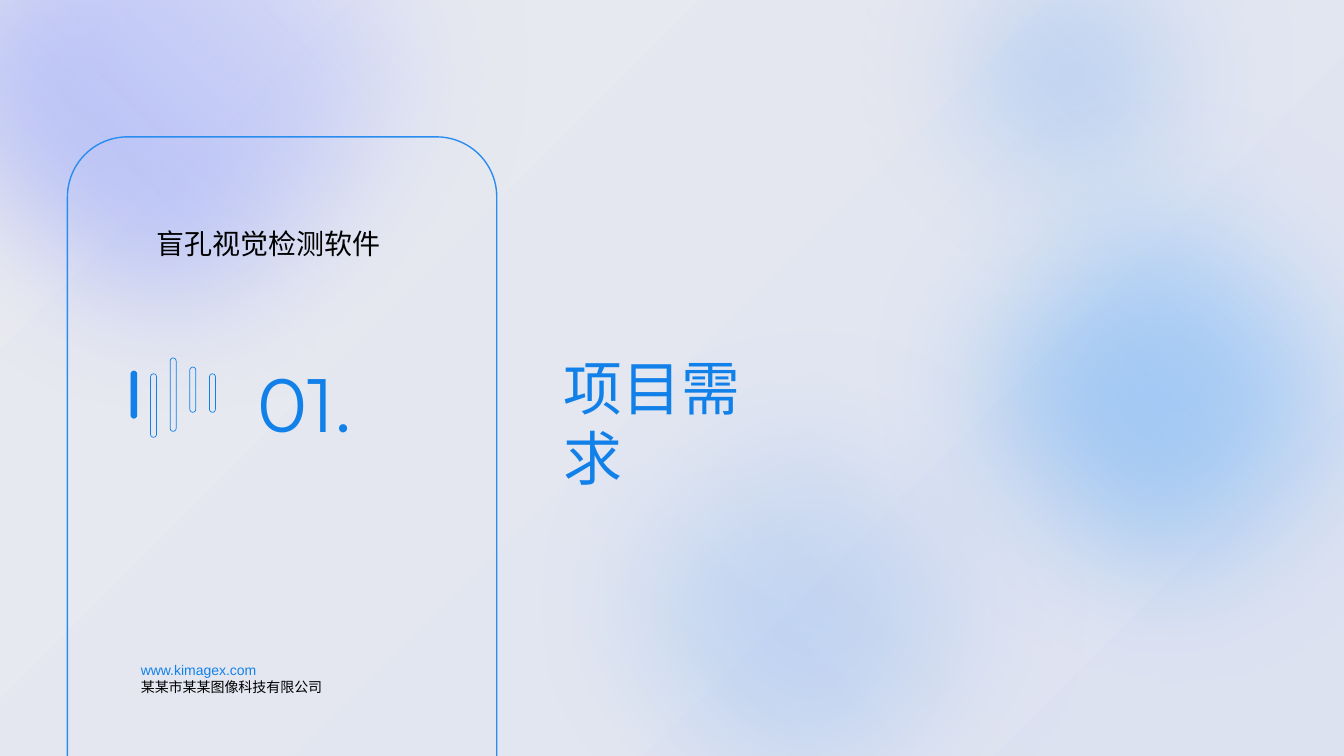
from lxml import etree
from pptx import Presentation
from pptx.dml.color import RGBColor
from pptx.enum.shapes import MSO_SHAPE
from pptx.enum.text import MSO_AUTO_SIZE
from pptx.oxml.ns import qn
from pptx.util import Cm, Pt

RECTANGLE = MSO_SHAPE.RECTANGLE
ELLIPSE = MSO_SHAPE.OVAL
ROUNDED = MSO_SHAPE.ROUNDED_RECTANGLE
FIT_TEXT = MSO_AUTO_SIZE.SHAPE_TO_FIT_TEXT

THEME = {
    "blue": "1181E9",
    "frame": "298DEF",
    "black": "000000",
    "backdrop": [("EAEBF0", 100), ("DDE2F1", 100)],
    "pale_glow": [("1181E9", 30), ("D5D5FB", 25)],
    "top_glow": [("1181E9", 30), ("D5D5FB", 43)],
    "blue_glow": [("298DEF", 30), ("E0EBFD", 100)],
    "violet_glow": [("8393F7", 100), ("E6E9FD", 37)],
    "cjk": "Noto Sans CJK SC",
    "latin": "Arial",
    "number_font": "Montserrat",
    "footer_size": 10,
    "heading_size": 20,
    "title_size": 42,
    "number_size": 54,
}

deck = Presentation()
deck.slide_width = Cm(33.87)
deck.slide_height = Cm(19.05)
page = deck.slides.add_slide(deck.slide_layouts[6])


def add_gradient_shape(kind, left, top, width, height, stops, angle):
    shape = page.shapes.add_shape(kind, Cm(left), Cm(top), Cm(width), Cm(height))
    shape.shadow.inherit = False
    shape.line.fill.background()
    shape.fill.gradient()
    gradient = shape._element.spPr.find(qn("a:gradFill"))
    for child in list(gradient):
        gradient.remove(child)
    stop_list = etree.SubElement(gradient, qn("a:gsLst"))
    for position, (color, opacity) in zip((0, 100000), stops):
        stop = etree.SubElement(stop_list, qn("a:gs"), pos=str(position))
        tone = etree.SubElement(stop, qn("a:srgbClr"), val=color)
        etree.SubElement(tone, qn("a:alpha"), val=str(opacity * 1000))
    etree.SubElement(gradient, qn("a:lin"), ang=str(angle * 60000), scaled="0")
    return shape


def add_text(left, top, width, height, lines, font, size, wrap=False, margins=(0, 0)):
    box = page.shapes.add_textbox(Cm(left), Cm(top), Cm(width), Cm(height))
    frame = box.text_frame
    frame.word_wrap = wrap
    frame.auto_size = FIT_TEXT
    frame.margin_left = frame.margin_right = Cm(margins[0])
    frame.margin_top = frame.margin_bottom = Cm(margins[1])
    for index, (text, color) in enumerate(lines):
        para = frame.add_paragraph() if index else frame.paragraphs[0]
        span = para.add_run()
        span.text = text
        span.font.size = Pt(size)
        span.font.color.rgb = RGBColor.from_string(color)
        span.font.name = font
        etree.SubElement(span.font._element, qn("a:ea"), typeface=THEME["cjk"])
    return box


add_gradient_shape(RECTANGLE, 0, 0, 33.87, 19.05, THEME["backdrop"], 45)

for left, top, diameter, glow in [
    (11.96, 6.65, 17.12, "pale_glow"),
    (19.91, -5.49, 14.48, "top_glow"),
    (20.57, 1.04, 17.63, "blue_glow"),
    (-5.61, -8.56, 20.17, "violet_glow"),
]:
    blob = add_gradient_shape(ELLIPSE, left, top, diameter, diameter, THEME[glow], 315)
    effects = blob._element.spPr.find(qn("a:effectLst"))
    etree.SubElement(effects, qn("a:softEdge"), rad=str(Cm(3.53)))

panel = page.shapes.add_shape(ROUNDED, Cm(1.7), Cm(3.45), Cm(10.82), Cm(22.25))
panel.adjustments[0] = 0.14
panel.shadow.inherit = False
panel.fill.background()
panel.line.color.rgb = RGBColor.from_string(THEME["frame"])
panel.line.width = Pt(1)

add_text(3.3, 16.54, 5.59, 1.12,
         [("www.kimagex.com", THEME["blue"]),
          ("某某市某某图像科技有限公司", THEME["black"])],
         THEME["latin"], THEME["footer_size"], wrap=True, margins=(0.25, 0.13))

add_text(6.5, 8.99, 3.18, 2.31, [("01.", THEME["blue"])],
         THEME["number_font"], THEME["number_size"])

bars = page.shapes.add_group_shape()
for index, (top, height) in enumerate(
    [(9.35, 1.19), (9.42, 1.6), (9.02, 1.85), (9.25, 1.14), (9.42, 0.97)]
):
    bar = bars.shapes.add_shape(
        ROUNDED, Cm(3.3 + index * 0.495), Cm(top), Cm(0.15), Cm(height))
    bar.adjustments[0] = 0.5
    bar.shadow.inherit = False
    if index == 0:
        bar.fill.solid()
        bar.fill.fore_color.rgb = RGBColor.from_string(THEME["blue"])
    else:
        bar.fill.background()
    bar.line.color.rgb = RGBColor.from_string(THEME["blue"])
    bar.line.width = Pt(0.5)

heading = add_text(3.3, 5.49, 6.48, 1.07, [("盲孔视觉检测软件", THEME["black"])],
                   THEME["cjk"], THEME["heading_size"], wrap=True)
heading_para = heading.text_frame.paragraphs[0]
heading_para.line_spacing = 1.25
heading_para._p.get_or_add_pPr().set("marL", str(Cm(0.64)))

add_text(14.2, 8.86, 5.92, 1.8, [("项目需求", THEME["blue"])],
         THEME["cjk"], THEME["title_size"])

deck.save("out.pptx")
